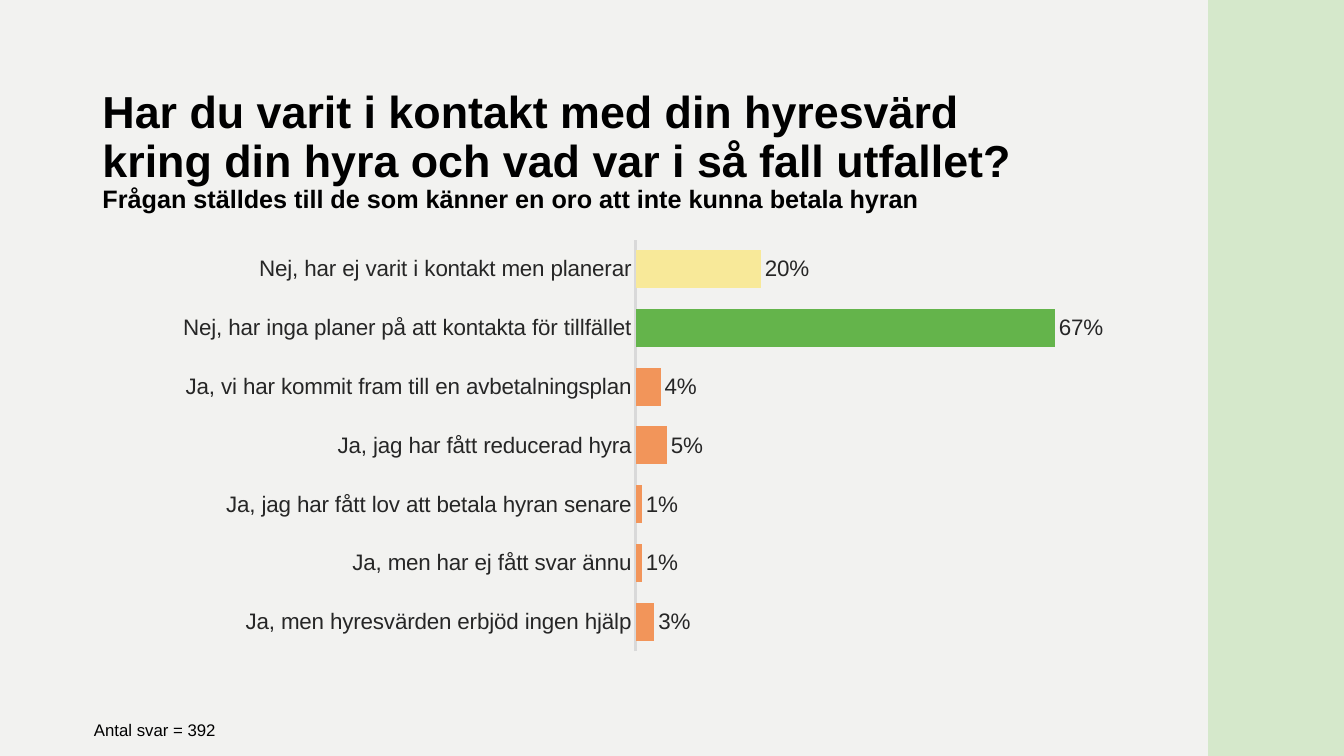
from lxml import etree
from pptx import Presentation
from pptx.chart.data import CategoryChartData
from pptx.dml.color import RGBColor
from pptx.enum.chart import XL_CHART_TYPE as ChartType, XL_LABEL_POSITION as LabelPosition
from pptx.enum.chart import XL_TICK_MARK as TickMark
from pptx.enum.shapes import MSO_SHAPE as ShapeType
from pptx.enum.text import MSO_ANCHOR as Anchor, MSO_AUTO_SIZE as AutoSize, PP_ALIGN as Align
from pptx.oxml.ns import qn
from pptx.util import Pt

# Content
QUESTION = "Har du varit i kontakt med din hyresvärd kring din hyra och vad var i så fall utfallet?"
SUBTITLE = "Frågan ställdes till de som känner en oro att inte kunna betala hyran"
FOOTNOTE = "Antal svar = 392"
YELLOW, GREEN, ORANGE = "F8E999", "64B44B", "F2955A"
ANSWERS = [
    ("Nej, har ej varit i kontakt men planerar", 0.20, YELLOW),
    ("Nej, har inga planer på att kontakta för tillfället", 0.67, GREEN),
    ("Ja, vi har kommit fram till en avbetalningsplan", 0.04, ORANGE),
    ("Ja, jag har fått reducerad hyra", 0.05, ORANGE),
    ("Ja, jag har fått lov att betala hyran senare", 0.01, ORANGE),
    ("Ja, men har ej fått svar ännu", 0.01, ORANGE),
    ("Ja, men hyresvärden erbjöd ingen hjälp", 0.03, ORANGE),
]

# Layout in points, plot area as shares of the chart
WIDTH, HEIGHT = 960, 540
BAND_WIDTH = 97
TITLE_BOX = (66, 83.5, 694, 50)
CHART_BOX = (66, 157, 761, 331)
FOOTNOTE_BOX = (60, 510.5, 102, 22)
PLOT_AREA = {"x": 0.51, "y": 0.043, "w": 0.47, "h": 0.888}
FONT, BLACK, DARK = "Arial", "000000", "262626"


def color(hex_value):
    return RGBColor.from_string(hex_value)


def place(box):
    return [Pt(length) for length in box]


def style(font, size, hex_value, bold=False):
    font.name, font.size, font.bold = FONT, Pt(size), bold
    font.color.rgb = color(hex_value)


def fix_plot_area(chart):
    plot_area = chart._chartSpace.chart.plotArea
    for old_layout in plot_area.findall(qn("c:layout")):
        plot_area.remove(old_layout)
    layout = etree.Element(qn("c:layout"))
    plot_area.insert(0, layout)
    manual = etree.SubElement(layout, qn("c:manualLayout"))
    settings = {"layoutTarget": "inner", "xMode": "edge", "yMode": "edge", **PLOT_AREA}
    for name, value in settings.items():
        etree.SubElement(manual, qn(f"c:{name}")).set("val", str(value))


presentation = Presentation()
presentation.slide_width, presentation.slide_height = Pt(WIDTH), Pt(HEIGHT)
slide = presentation.slides.add_slide(presentation.slide_layouts[5])
slide.background.fill.solid()
slide.background.fill.fore_color.rgb = color("F2F2F0")

# Green band along the right edge
band = slide.shapes.add_shape(
    ShapeType.RECTANGLE, *place((WIDTH - BAND_WIDTH, 0, BAND_WIDTH, HEIGHT)))
band.shadow.inherit = False
band.fill.solid()
band.fill.fore_color.rgb = color("D5E8CB")
band.line.fill.background()

# Title with a smaller second part
title = slide.shapes.title
title.left, title.top, title.width, title.height = place(TITLE_BOX)
title_frame = title.text_frame
title_frame.text = f"{QUESTION}\v{SUBTITLE}"
title_frame.auto_size = AutoSize.NONE
title_frame.vertical_anchor = Anchor.MIDDLE
paragraph = title_frame.paragraphs[0]
paragraph.alignment, paragraph.line_spacing = Align.LEFT, 0.9
for run, size in zip(paragraph.runs, (32, 18)):
    style(run.font, size, BLACK, bold=True)

# Bar chart
chart_data = CategoryChartData(number_format="0%")
chart_data.categories = [answer for answer, _, _ in ANSWERS]
chart_data.add_series("Series 1", [share for _, share, _ in ANSWERS])
chart = slide.shapes.add_chart(ChartType.BAR_CLUSTERED, *place(CHART_BOX), chart_data).chart
chart.has_legend = chart.has_title = False
style(chart.font, 16, DARK)
fix_plot_area(chart)

category_axis = chart.category_axis
category_axis.reverse_order = True
category_axis.major_tick_mark = category_axis.minor_tick_mark = TickMark.NONE
category_axis.format.line.color.rgb = color("D9D9D9")
category_axis.format.line.width = Pt(2.5)
style(category_axis.tick_labels.font, 16, DARK)

value_axis = chart.value_axis
value_axis.minimum_scale, value_axis.maximum_scale = 0, 0.8
value_axis.has_major_gridlines = False
value_axis.visible = False

plot = chart.plots[0]
plot.gap_width = 55
plot.vary_by_categories = False
plot.has_data_labels = True
labels = plot.data_labels
labels.show_value = True
labels.position = LabelPosition.OUTSIDE_END
labels.number_format, labels.number_format_is_linked = "0%", False
style(labels.font, 16, DARK)

series = plot.series[0]
series.format.fill.solid()
series.format.fill.fore_color.rgb = color(GREEN)
for index, (_, _, bar_color) in enumerate(ANSWERS):
    fill = series.points[index].format.fill
    fill.solid()
    fill.fore_color.rgb = color(bar_color)

# Number of answers
footnote = slide.shapes.add_textbox(*place(FOOTNOTE_BOX)).text_frame
footnote.text = FOOTNOTE
footnote.word_wrap = False
footnote.auto_size = AutoSize.SHAPE_TO_FIT_TEXT
style(footnote.paragraphs[0].runs[0].font, 12, BLACK)

presentation.save("out.pptx")
